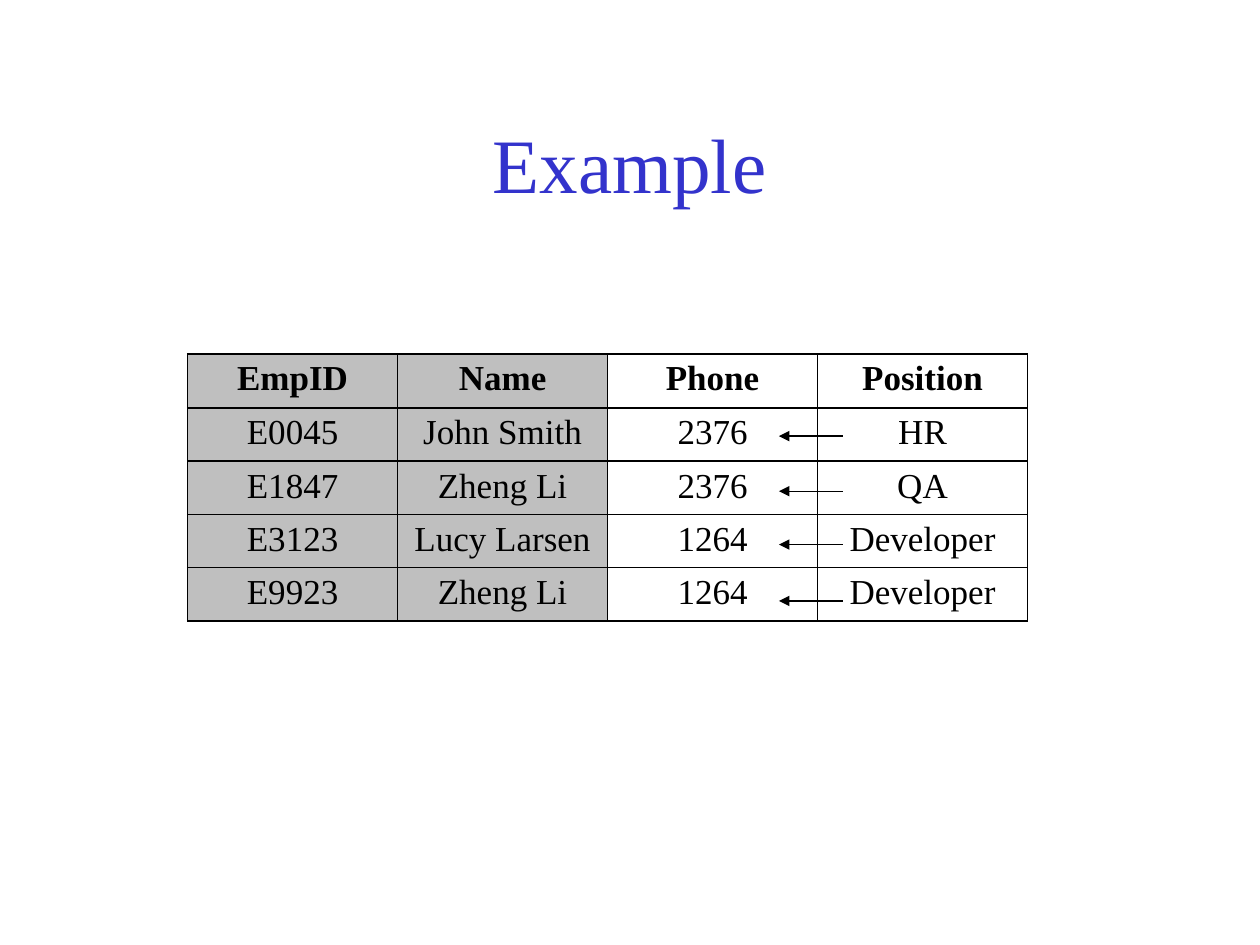
from dataclasses import dataclass

from lxml import etree
from pptx import Presentation
from pptx.dml.color import RGBColor
from pptx.enum import shapes, text
from pptx.oxml import ns
from pptx.util import Pt


@dataclass(frozen=True)
class Theme:
    face: str = "Times New Roman"
    title: RGBColor = RGBColor(0x33, 0x33, 0xCC)
    ink: RGBColor = RGBColor(0, 0, 0)
    key: RGBColor = RGBColor(0xBF, 0xBF, 0xBF)
    plain: RGBColor = RGBColor(0xFF, 0xFF, 0xFF)
    big: int = 44
    body: int = 20


THEME = Theme()
KEYS = 2  # shaded columns on the left
STAFF = [
    ("EmpID", "Name", "Phone", "Position"),
    ("E0045", "John Smith", "2376", "HR"),
    ("E1847", "Zheng Li", "2376", "QA"),
    ("E3123", "Lucy Larsen", "1264", "Developer"),
    ("E9923", "Zheng Li", "1264", "Developer"),
]


def write(frame, words, size, color, bold=False):
    para = frame.paragraphs[0]
    para.text = words
    para.alignment = text.PP_ALIGN.CENTER
    font = para.font
    font.name, font.size, font.bold = THEME.face, Pt(size), bold
    font.color.rgb = color


def add_title(slide, box, words):
    frame = slide.shapes.add_textbox(*map(Pt, box)).text_frame
    frame.word_wrap = True
    frame.vertical_anchor = text.MSO_ANCHOR.MIDDLE
    write(frame, words, THEME.big, THEME.title)


def add_edges(cell):
    """Draw a thin black border on all four sides of the cell."""
    props = cell._tc.get_or_add_tcPr()
    for place, side in enumerate(("lnL", "lnR", "lnT", "lnB")):
        edge = etree.Element(ns.qn(f"a:{side}"), w=str(Pt(1)))
        fill = etree.SubElement(edge, ns.qn("a:solidFill"))
        etree.SubElement(fill, ns.qn("a:srgbClr"), val=str(THEME.ink))
        props.insert(place, edge)


def add_staff(slide, box, head):
    """Fill the box with the staff table; head is the first row's height."""
    grid = slide.shapes.add_table(len(STAFF), len(STAFF[0]), *map(Pt, box)).table
    for col in grid.columns:
        col.width = Pt(box[2] / len(STAFF[0]))
    for r, words in enumerate(STAFF):
        grid.rows[r].height = Pt((box[3] - head) / (len(STAFF) - 1) if r else head)
        for c, word in enumerate(words):
            cell = grid.cell(r, c)
            cell.margin_top = cell.margin_bottom = Pt(3.2)
            cell.fill.solid()
            cell.fill.fore_color.rgb = THEME.key if c < KEYS else THEME.plain
            write(cell.text_frame, word, THEME.body, THEME.ink, bold=r == 0)
            add_edges(cell)


def add_arrows(slide, box, drops):
    """Point left from Position to Phone, at each drop below the box top."""
    left, top, width, _ = box
    for drop in drops:
        y = Pt(top + drop)
        line = slide.shapes.add_connector(
            shapes.MSO_CONNECTOR.STRAIGHT,
            Pt(left + width * 0.78), y, Pt(left + width * 0.704), y)
        line.line.color.rgb = THEME.ink
        line.line.width = Pt(0.75)
        etree.SubElement(line.line._get_or_add_ln(), ns.qn("a:tailEnd"), type="triangle")
        etree.SubElement(line._element.spPr, ns.qn("a:effectLst"))


def main():
    deck = Presentation()
    deck.slide_width, deck.slide_height = Pt(720), Pt(540)
    slide = deck.slides.add_slide(deck.slide_layouts[6])
    add_title(slide, (54, 48, 612, 90), "Example")
    box = (107.2, 202.2, 480, 149)
    add_staff(slide, box, head=31)
    add_arrows(slide, box, (47, 78.5, 109, 141.2))
    deck.save("out.pptx")


if __name__ == "__main__":
    main()
